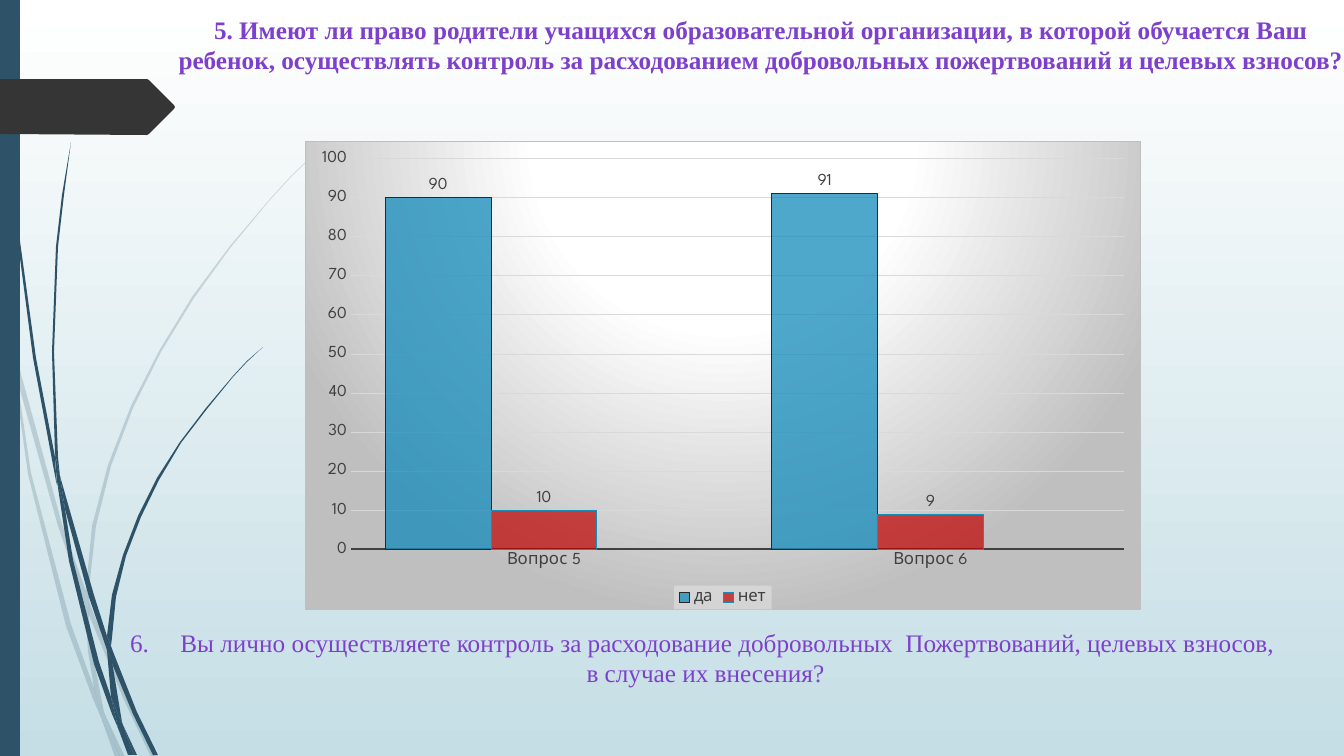
"""Builds the survey slide on parents' control over voluntary donations."""
from lxml import etree
from pptx import Presentation
from pptx.chart.data import CategoryChartData
from pptx.dml.color import RGBColor
from pptx.enum.chart import XL_CHART_TYPE, XL_LABEL_POSITION, XL_LEGEND_POSITION, XL_TICK_MARK
from pptx.enum.shapes import MSO_SHAPE
from pptx.enum.text import MSO_AUTO_SIZE, PP_ALIGN
from pptx.oxml import parse_xml
from pptx.oxml.ns import nsdecls, qn
from pptx.util import Emu, Pt

COLUMNS, NO_TICKS = XL_CHART_TYPE.COLUMN_CLUSTERED, XL_TICK_MARK.NONE
LABEL_ABOVE, LEGEND_BELOW = XL_LABEL_POSITION.OUTSIDE_END, XL_LEGEND_POSITION.BOTTOM
RECTANGLE, GROW, CENTER = MSO_SHAPE.RECTANGLE, MSO_AUTO_SIZE.SHAPE_TO_FIT_TEXT, PP_ALIGN.CENTER
EMU_PER_PX = 914400 / 100.8
CHART_FONT, TEXT_FONT = "League Spartan", "Times New Roman"

WHITE = RGBColor(0xFF, 0xFF, 0xFF)
PALE_BLUE = RGBColor(0xC5, 0xDE, 0xE5)
NAVY = RGBColor(0x2E, 0x53, 0x69)
CHARCOAL = RGBColor(0x35, 0x35, 0x35)
PURPLE = RGBColor(0x7E, 0x40, 0xCC)
LABEL_GREY = RGBColor(0x40, 0x40, 0x40)
GRID_GREY = RGBColor(0xD9, 0xD9, 0xD9)
YES_BLUE = RGBColor(0x17, 0x8D, 0xBB)
YES_EDGE = RGBColor(0x28, 0x28, 0x28)
NO_RED = RGBColor(0xC0, 0x00, 0x00)
SPARE_BLUE = RGBColor(0x26, 0x59, 0x91)
SPARE_EDGE = RGBColor(0x1C, 0x43, 0x6D)

PALE_STEMS = [
    [(11, 353), (9, 325), (0, 284), (0, 301), (10, 347)],
    [(58, 526), (85, 604), (86, 591), (62, 524), (14, 348), (17, 379)],
    [(93, 612), (89, 601), (89, 615), (124, 700), (151, 757), (156, 757), (128, 698)],
    [(120, 757), (125, 757), (106, 717)],
    [(94, 688), (71, 624), (31, 473), (17, 379), (11, 353), (28, 474), (66, 626), (93, 699),
     (102, 720), (100, 713)],
    [(85, 604), (88, 651), (94, 688), (97, 698), (106, 717), (104, 712), (92, 651), (89, 615),
     (89, 613)],
    [(89, 589), (96, 526), (111, 466), (133, 408), (161, 352), (194, 298), (231, 247), (270, 200),
     (292, 176), (314, 155), (314, 154), (291, 176), (270, 199), (230, 246), (192, 297),
     (159, 351), (131, 406), (108, 465), (92, 526), (86, 589), (86, 591), (89, 601)],
    [(102, 720), (115, 757), (120, 757)],
    [(89, 613), (89, 615), (89, 601), (86, 591), (85, 604)],
    [(97, 698), (94, 688), (100, 713), (102, 720), (120, 757), (106, 717)],
]
DARK_STEMS = [
    [(7, 111), (17, 235), (33, 358), (56, 481), (57, 485), (55, 461), (55, 457), (36, 358),
     (19, 234), (8, 110), (5, 48), (4, 0), (3, 0), (4, 48)],
    [(89, 597), (107, 650), (107, 636), (94, 595), (60, 476), (65, 509)],
    [(114, 654), (111, 646), (111, 661), (133, 714), (153, 755), (158, 755), (137, 712)],
    [(111, 697), (99, 662), (73, 560), (65, 509), (57, 481), (69, 561), (94, 664), (112, 714),
     (118, 728), (117, 723)],
    [(60, 476), (58, 457), (54, 352), (58, 247), (64, 195), (71, 142), (62, 195), (56, 247),
     (52, 352), (55, 453)],
    [(134, 755), (137, 755), (123, 725)],
    [(57, 481), (65, 509), (60, 476), (55, 453), (55, 457)],
    [(112, 638), (116, 597), (126, 556), (141, 517), (159, 480), (181, 443), (207, 409),
     (233, 377), (247, 362), (263, 347), (247, 361), (233, 376), (206, 408), (180, 442),
     (157, 478), (138, 516), (123, 555), (112, 595), (107, 636), (111, 646)],
    [(118, 728), (128, 755), (132, 755)],
    [(107, 650), (111, 697), (117, 712), (123, 725), (122, 722), (112, 661), (110, 656)],
    [(107, 650), (110, 656), (112, 661), (111, 646), (107, 636)],
    [(117, 712), (111, 697), (117, 723), (118, 728), (131, 755), (134, 755), (123, 725)],
]
ARROW_TAG = [(175, 107), (174, 109), (149, 134), (147, 135), (0, 134), (0, 79), (147, 79),
             (149, 80), (174, 105)]

CATEGORIES = ["Вопрос 5", "Вопрос 6"]
ANSWERS = [
    ("да", (90, 91), YES_BLUE, 76, YES_EDGE),
    ("нет", (10, 9), NO_RED, 70, YES_BLUE),
    ("Series 3", (None, None), SPARE_BLUE, 85, SPARE_EDGE),
]
QUESTION_5 = [
    "5. Имеют ли право родители учащихся образовательной организации, в которой обучается Ваш ",
    "ребенок, осуществлять контроль за расходованием добровольных пожертвований и целевых взносов? ",
]
QUESTION_6 = [
    "Вы лично осуществляете контроль за расходование добровольных  Пожертвований, целевых взносов, ",
    "в случае их внесения?",
]


def px(length):
    """Turn pixels into EMU."""
    return Emu(round(length * EMU_PER_PX))


def set_opacity(color_element, percent):
    """Make a colour element partly transparent."""
    etree.SubElement(color_element, qn("a:alpha")).set("val", str(percent * 1000))


def paint(shape, color, opacity=100):
    """Give a shape a plain fill with no line or shadow."""
    shape.shadow.inherit = False
    shape.fill.solid()
    shape.fill.fore_color.rgb = color
    shape.line.fill.background()
    if opacity < 100:
        set_opacity(shape.element.xpath("./p:spPr/a:solidFill/a:srgbClr")[0], opacity)


def add_outline(slide, points, color, opacity=100):
    """Draw a filled outline through the points."""
    start, *rest = [(px(x), px(y)) for x, y in points]
    builder = slide.shapes.build_freeform(*start)
    builder.add_line_segments(rest)
    paint(builder.convert_to_shape(), color, opacity)


def add_text(slide, box, lines, bold=False, first_number=None):
    """Add centred paragraphs, numbering the first one on request."""
    question = slide.shapes.add_textbox(*map(px, box))
    frame = question.text_frame
    frame.word_wrap, frame.auto_size = False, GROW
    frame.text = "\n".join(lines)
    for paragraph in frame.paragraphs:
        paragraph.alignment = CENTER
        font = paragraph.runs[0].font
        font.name, font.size, font.bold = TEXT_FONT, Pt(18), bold
        font.color.rgb = PURPLE
    if first_number:
        properties = question.element.xpath(".//a:pPr")
        for item in properties:
            item.set("marL", "457200")
            item.set("indent", "-457200")
        numbering = etree.SubElement(properties[0], qn("a:buAutoNum"))
        numbering.set("type", "arabicPeriod")
        numbering.set("startAt", str(first_number))


def style_font(font):
    """Apply the chart's lettering."""
    font.name, font.size = CHART_FONT, Pt(12)
    font.color.rgb = LABEL_GREY


def style_line(line, color, width):
    """Set the colour and width of a line."""
    line.color.rgb, line.width = color, Pt(width)


def style_axes(chart):
    """Format both axes and the gridlines."""
    for axis in (chart.category_axis, chart.value_axis):
        axis.major_tick_mark = axis.minor_tick_mark = NO_TICKS
        style_font(axis.tick_labels.font)
    style_line(chart.category_axis.format.line, LABEL_GREY, 1.5)
    chart.value_axis.maximum_scale, chart.value_axis.major_unit = 100, 10
    chart.value_axis.format.line.fill.background()
    style_line(chart.value_axis.major_gridlines.format.line, GRID_GREY, 0.75)


def style_legend(chart):
    """Place the legend below and hide the empty third entry."""
    chart.has_legend = True
    chart.legend.position, chart.legend.include_in_layout = LEGEND_BELOW, False
    style_font(chart.legend.font)
    chart.element.xpath(".//c:legend/c:legendPos")[0].addnext(parse_xml(
        f'<c:legendEntry {nsdecls("c")}><c:idx val="2"/><c:delete val="1"/></c:legendEntry>'))
    chart.element.xpath(".//c:legend/c:overlay")[0].addnext(parse_xml(
        f'<c:spPr {nsdecls("c", "a")}><a:solidFill><a:srgbClr val="F2F2F2">'
        '<a:alpha val="39000"/></a:srgbClr></a:solidFill></c:spPr>'))


def add_backdrop(chart):
    """Fill the chart area with a radial gradient and a thin border."""
    stops = "".join(f'<a:gs pos="{place}000"><a:srgbClr val="{color}"/></a:gs>'
                    for place, color in ((0, "FFFFFF"), (39, "FFFFFF"), (100, "BFBFBF")))
    chart.element.find(qn("c:chart")).addnext(parse_xml(
        f'<c:spPr {nsdecls("c", "a")}><a:gradFill><a:gsLst>{stops}</a:gsLst>'
        '<a:path path="circle"><a:fillToRect l="50000" t="-80000" r="50000" b="180000"/>'
        '</a:path></a:gradFill><a:ln w="9525"><a:solidFill><a:srgbClr val="BFBFBF"/>'
        '</a:solidFill></a:ln></c:spPr>'))


def add_answers_chart(slide, box):
    """Add the column chart of yes and no answers."""
    answers = CategoryChartData()
    answers.categories = CATEGORIES
    for name, values, *_ in ANSWERS:
        answers.add_series(name, values)
    chart = slide.shapes.add_chart(COLUMNS, *map(px, box), answers).chart
    chart.has_title = False
    style_font(chart.font)
    plot = chart.plots[0]
    plot.gap_width, plot.overlap, plot.vary_by_categories = 65, 0, False
    for series, (_, _, color, _, edge) in zip(plot.series, ANSWERS):
        series.format.fill.solid()
        series.format.fill.fore_color.rgb = color
        style_line(series.format.line, edge, 0.75)
        series.data_labels.show_value, series.data_labels.position = True, LABEL_ABOVE
        style_font(series.data_labels.font)
    fills = chart.element.xpath(".//c:ser/c:spPr/a:solidFill/a:srgbClr")
    for fill, (_, _, _, opacity, _) in zip(fills, ANSWERS):
        set_opacity(fill, opacity)
    for finish in (style_axes, style_legend, add_backdrop):
        finish(chart)


def set_background(slide):
    """Fade the background from white down to pale blue."""
    fill = slide.background.fill
    fill.gradient()
    fill.gradient_angle = 270
    for stop, place, color in zip(fill.gradient_stops, (0, 1), (WHITE, PALE_BLUE)):
        stop.position, stop.color.rgb = place, color


def main():
    """Build and save the slide."""
    deck = Presentation()
    deck.slide_width, deck.slide_height = px(1344), px(756)
    slide = deck.slides.add_slide(deck.slide_layouts[6])
    set_background(slide)
    for stems, opacity in ((PALE_STEMS, 20), (DARK_STEMS, 100)):
        for stem in stems:
            add_outline(slide, stem, NAVY, opacity)
    paint(slide.shapes.add_shape(RECTANGLE, *map(px, (0, 0, 20, 756))), NAVY)
    add_outline(slide, ARROW_TAG, CHARCOAL)
    add_answers_chart(slide, (305, 141, 836, 469))
    add_text(slide, (162, 9, 1204, 72), QUESTION_5, bold=True)
    add_text(slide, (114, 622, 1183, 72), QUESTION_6, first_number=6)
    deck.save("out.pptx")


if __name__ == "__main__":
    main()
